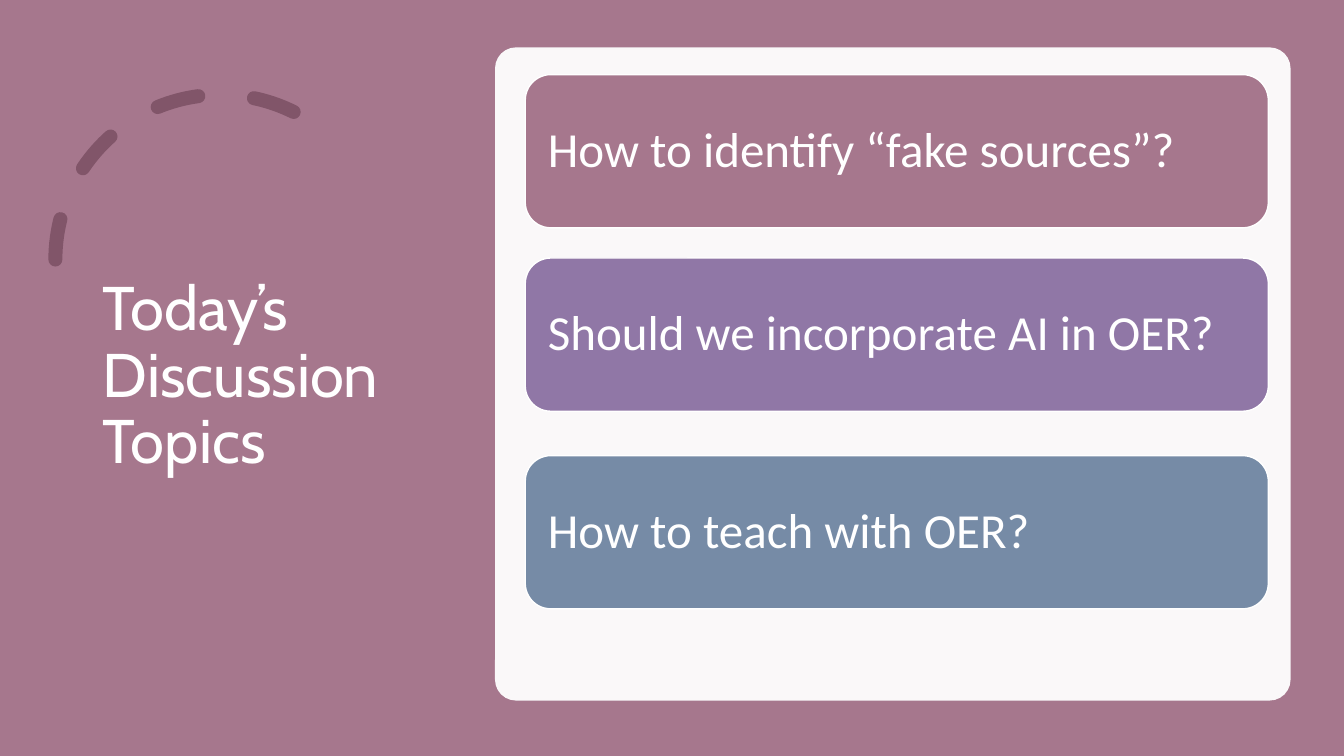
from dataclasses import dataclass

from lxml.etree import SubElement
from pptx import Presentation
from pptx.dml.color import RGBColor
from pptx.enum.dml import MSO_LINE
from pptx.enum.shapes import MSO_SHAPE
from pptx.enum.text import MSO_ANCHOR, MSO_AUTO_SIZE, PP_ALIGN
from pptx.oxml.ns import qn
from pptx.util import Inches, Pt


@dataclass(frozen=True)
class Theme:
    """Colours, fonts and type sizes of the deck."""

    rose: str = "A6778D"
    plum: str = "815569"
    violet: str = "9077A6"
    slate: str = "768BA6"
    white: str = "FFFFFF"
    title_font: str = "Cabin"
    body_font: str = "Calibri"
    title_size: int = 44
    body_size: int = 35


class SlideBuilder:
    """Draws styled elements on one slide."""

    def __init__(self, page, theme):
        """Keep the slide and its theme."""
        self.page = page
        self.theme = theme

    def shape(self, kind, left, top, width, height, fill=None, line=None, weight=1):
        """Add a preset shape without shadow."""
        lengths = [Inches(value) for value in (left, top, width, height)]
        shape = self.page.shapes.add_shape(kind, *lengths)
        shape.shadow.inherit = False
        for part, colour in ((shape.fill, fill), (shape.line.fill, line)):
            if colour:
                part.solid()
                part.fore_color.rgb = RGBColor.from_string(colour)
            else:
                part.background()
        if line:
            shape.line.width = Pt(weight)
        return shape

    def set_text(self, shape, text, font, size, inset_x, inset_y):
        """Put one left-aligned, vertically centred paragraph in a shape."""
        frame = shape.text_frame
        frame_format = {
            "word_wrap": True,
            "auto_size": MSO_AUTO_SIZE.NONE,
            "vertical_anchor": MSO_ANCHOR.MIDDLE,
            "margin_left": Inches(inset_x),
            "margin_right": Inches(inset_x),
            "margin_top": Inches(inset_y),
            "margin_bottom": Inches(inset_y),
        }
        para = frame.paragraphs[0]
        para_format = {"alignment": PP_ALIGN.LEFT, "line_spacing": 0.9}
        span = para.add_run()
        span.text = text
        font_format = {"name": font, "size": Pt(size)}
        for target, values in ((frame, frame_format), (para, para_format), (span.font, font_format)):
            for name, value in values.items():
                setattr(target, name, value)
        span.font.color.rgb = RGBColor.from_string(self.theme.white)

    def title(self, text, left, top, width, height):
        """Place the title placeholder above the shapes drawn so far."""
        title = self.page.shapes.title
        box = {"left": left, "top": top, "width": width, "height": height}
        for name, value in box.items():
            setattr(title, name, Inches(value))
        self.set_text(title, text, self.theme.title_font, self.theme.title_size, 0.1, 0.05)
        self.page.shapes.element.append(title.element)

    def dashed_arc(self, left, top, size):
        """Draw the mirrored arc with thick rounded dashes."""
        arc = self.shape(MSO_SHAPE.ARC, left, top, size, size, line=self.theme.plum, weight=10)
        arc.adjustments[0] = 146.129
        arc.adjustments[1] = 0
        arc.line.dash_style = MSO_LINE.DASH
        properties = arc.element.spPr
        properties.find(qn("a:xfrm")).set("flipH", "1")
        properties.find(qn("a:ln")).set("cap", "rnd")

    def panel(self, left, top, width, height):
        """Draw the slightly transparent white panel."""
        panel = self.shape(MSO_SHAPE.ROUNDED_RECTANGLE, left, top, width, height, self.theme.white)
        panel.adjustments[0] = 0.032
        colour = panel.element.spPr.find(qn("a:solidFill"))[0]
        SubElement(colour, qn("a:alpha")).set("val", "95000")

    def topic(self, text, top, colour):
        """Draw one topic card."""
        card = self.shape(
            MSO_SHAPE.ROUNDED_RECTANGLE, 5.21, top, 7.37, 1.52, colour, self.theme.white
        )
        self.set_text(card, text, self.theme.body_font, self.theme.body_size, 0.15, 0.15)


def main():
    """Build and save the slide."""
    deck = Presentation()
    deck.slide_width, deck.slide_height = Inches(13.33), Inches(7.5)
    theme = Theme()
    builder = SlideBuilder(deck.slides.add_slide(deck.slide_layouts[5]), theme)
    builder.shape(MSO_SHAPE.RECTANGLE, 0, 0, 13.33, 7.5, theme.rose)
    builder.dashed_arc(0.55, 0.94, 3.27)
    builder.title("Today’s Discussion Topics", 0.92, 0.7, 3.23, 6.09)
    builder.panel(4.91, 0.47, 7.89, 6.48)
    topics = (
        ("How to identify “fake sources”?", 0.74, theme.rose),
        ("Should we incorporate AI in OER?", 2.56, theme.violet),
        ("How to teach with OER?", 4.52, theme.slate),
    )
    for text, top, colour in topics:
        builder.topic(text, top, colour)
    deck.save("out.pptx")


if __name__ == "__main__":
    main()
